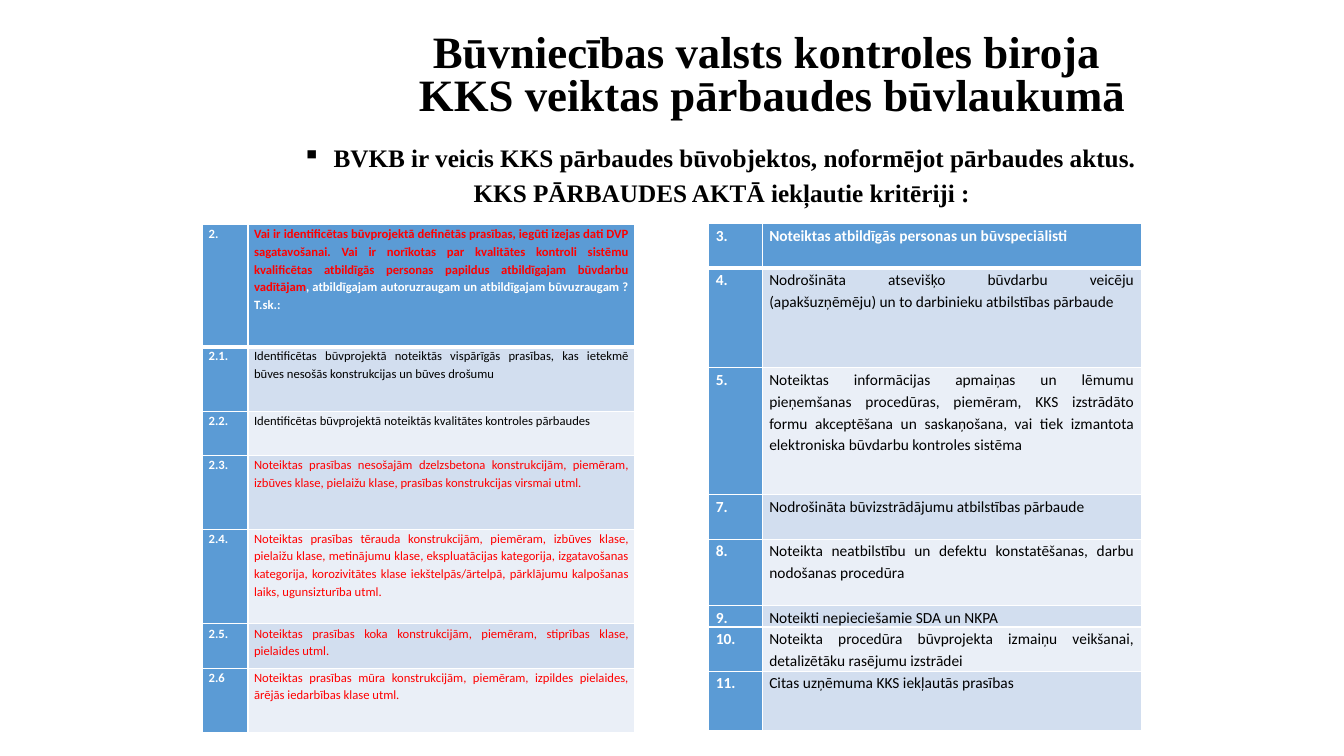
from dataclasses import dataclass

from lxml import etree
from pptx import Presentation
from pptx.dml.color import RGBColor
from pptx.enum import text
from pptx.oxml import ns
from pptx.util import Inches, Pt


@dataclass(frozen=True)
class Theme:
    heading_font: str = "Times New Roman"
    table_font: str = "Calibri"
    title_size: int = 32
    lead_size: int = 18
    black: str = "000000"
    white: str = "FFFFFF"
    red: str = "FF0000"
    blue: str = "5B9BD5"
    bands: tuple = ("D2DEEF", "EAEFF7")


THEME = Theme()

# Each row: height, number, then (wording, colour) runs
PROJECT_CRITERIA = [
    (1.21, "2.",
     ("Vai ir identificētas būvprojektā definētās prasības, iegūti izejas dati DVP "
      "sagatavošanai. Vai ir norīkotas par kvalitātes kontroli sistēmu kvalificētas "
      "atbildīgās personas papildus atbildīgajam būvdarbu vadītājam", THEME.red),
     (", atbildīgajam autoruzraugam un atbildīgajam būvuzraugam ? T.sk.:", THEME.white)),
    (0.64, "2.1.",
     ("Identificētas būvprojektā noteiktās vispārīgās prasības, kas ietekmē būves "
      "nesošās konstrukcijas un būves drošumu", THEME.black)),
    (0.44, "2.2.",
     ("Identificētas būvprojektā noteiktās kvalitātes kontroles pārbaudes", THEME.black)),
    (0.73, "2.3.",
     ("Noteiktas prasības nesošajām dzelzsbetona konstrukcijām, piemēram, izbūves klase, "
      "pielaižu klase, prasības konstrukcijas virsmai utml.", THEME.red)),
    (0.94, "2.4.",
     ("Noteiktas prasības tērauda konstrukcijām, piemēram, izbūves klase, pielaižu klase, "
      "metinājumu klase, ekspluatācijas kategorija, izgatavošanas kategorija, "
      "korozivitātes klase iekštelpās/ārtelpā, pārklājumu kalpošanas laiks, "
      "ugunsizturība utml.", THEME.red)),
    (0.44, "2.5.",
     ("Noteiktas prasības koka konstrukcijām, piemēram, stiprības klase, pielaides utml.",
      THEME.red)),
    (0.64, "2.6",
     ("Noteiktas prasības mūra konstrukcijām, piemēram, izpildes pielaides, ārējās "
      "iedarbības klase utml.", THEME.red)),
]

PROCEDURE_CRITERIA = [
    (0.44, "3.", ("Noteiktas atbildīgās personas un būvspeciālisti", THEME.white)),
    (0.99, "4.",
     ("Nodrošināta atsevišķo būvdarbu veicēju\v(apakšuzņēmēju) un to darbinieku "
      "atbilstības pārbaude", THEME.black)),
    (1.26, "5.",
     ("Noteiktas informācijas apmaiņas un lēmumu pieņemšanas procedūras, piemēram, KKS "
      "izstrādāto formu akceptēšana un saskaņošana, vai tiek izmantota elektroniska "
      "būvdarbu kontroles sistēma", THEME.black)),
    (0.44, "7.", ("Nodrošināta būvizstrādājumu atbilstības pārbaude", THEME.black)),
    (0.66, "8.",
     ("Noteikta neatbilstību un defektu konstatēšanas, darbu nodošanas procedūra",
      THEME.black)),
    (0.21, "9.", ("Noteikti nepieciešamie SDA un NKPA", THEME.black)),
    (0.44, "10.",
     ("Noteikta procedūra būvprojekta izmaiņu veikšanai, detalizētāku rasējumu izstrādei",
      THEME.black)),
    (0.59, "11.", ("Citas uzņēmuma KKS iekļautās prasības", THEME.black)),
]


def style_font(font, name, size, color, bold):
    font.name, font.size, font.bold = name, Pt(size), bold
    font.color.rgb = RGBColor.from_string(color)


def add_heading(slide, box, lines, size, align=None, spacing=None):
    frame = slide.shapes.add_textbox(*map(Inches, box)).text_frame
    frame.word_wrap = True
    frame.text = "\n".join(lines)
    for paragraph in frame.paragraphs:
        paragraph.alignment = align
        paragraph.line_spacing = spacing
        for run in paragraph.runs:
            style_font(run.font, THEME.heading_font, size, THEME.black, True)
    return frame


def add_square_bullet(paragraph, indent):
    properties = paragraph._p.get_or_add_pPr()
    properties.set("marL", str(Inches(indent)))
    properties.set("indent", str(-Inches(indent)))
    etree.SubElement(properties, ns.qn("a:buChar"), char="▪")


def set_borders(cell, widths):
    """Draw white left, right, top and bottom borders of the given point widths."""
    properties = cell._tc.get_or_add_tcPr()
    for side, width in zip("LRTB", widths):
        line = etree.SubElement(properties, ns.qn(f"a:ln{side}"), w=str(Pt(width)))
        fill = etree.SubElement(line, ns.qn("a:solidFill"))
        etree.SubElement(fill, ns.qn("a:srgbClr"), val=THEME.white)


def fill_cell(cell, runs, background, size, margin, bold):
    cell.margin_left = cell.margin_right = Inches(margin)
    cell.margin_top = cell.margin_bottom = 0
    cell.fill.solid()
    cell.fill.fore_color.rgb = RGBColor.from_string(background)
    paragraph = cell.text_frame.paragraphs[0]
    paragraph.alignment = text.PP_ALIGN.JUSTIFY
    paragraph.line_spacing = 1.15
    paragraph.space_after = Pt(10)
    for wording, color in runs:
        for index, part in enumerate(wording.split("\v")):
            if index:
                paragraph.add_line_break()
            run = paragraph.add_run()
            run.text = part
            style_font(run.font, THEME.table_font, size, color, bold)


def add_criteria_table(slide, left, top, widths, criteria, size, margin):
    height = sum(row[0] for row in criteria)
    table = slide.shapes.add_table(
        len(criteria), 2, Inches(left), Inches(top),
        Inches(sum(widths)), Inches(height)).table
    for column, width in zip(table.columns, widths):
        column.width = Inches(width)
    for index, (row_height, number, *runs) in enumerate(criteria):
        table.rows[index].height = Inches(row_height)
        is_header = index == 0
        band = THEME.blue if is_header else THEME.bands[(index - 1) % 2]
        number_cell, criterion_cell = table.rows[index].cells
        for cell in (number_cell, criterion_cell):
            set_borders(cell, (1, 1, 3 if index == 1 else 1, 3 if is_header else 1))
        fill_cell(number_cell, [(number, THEME.white)], THEME.blue, size, margin, True)
        fill_cell(criterion_cell, runs, band, size, margin, is_header)


def main():
    deck = Presentation()
    deck.slide_width, deck.slide_height = Inches(13.33), Inches(7.5)
    slide = deck.slides.add_slide(deck.slide_layouts[6])

    title = add_heading(
        slide, (2.9, 0.35, 9.52, 0.83),
        ["Būvniecības valsts kontroles biroja ", "KKS veiktas pārbaudes būvlaukumā"],
        THEME.title_size, text.PP_ALIGN.CENTER, 0.8)
    title.vertical_anchor = text.MSO_ANCHOR.MIDDLE
    lead = add_heading(
        slide, (2.9, 1.36, 9.84, 0.4),
        ["BVKB ir veicis KKS pārbaudes būvobjektos, noformējot pārbaudes aktus."],
        THEME.lead_size)
    add_square_bullet(lead.paragraphs[0], 0.31)

    add_criteria_table(slide, 7.03, 2.22, (0.53, 3.76), PROCEDURE_CRITERIA, 11, 0.07)
    add_criteria_table(slide, 2.01, 2.23, (0.45, 3.83), PROJECT_CRITERIA, 9, 0.06)
    add_heading(slide, (4.6, 1.71, 6.67, 0.4),
                ["KKS PĀRBAUDES AKTĀ iekļautie kritēriji :"], THEME.lead_size)
    deck.save("out.pptx")


if __name__ == "__main__":
    main()
